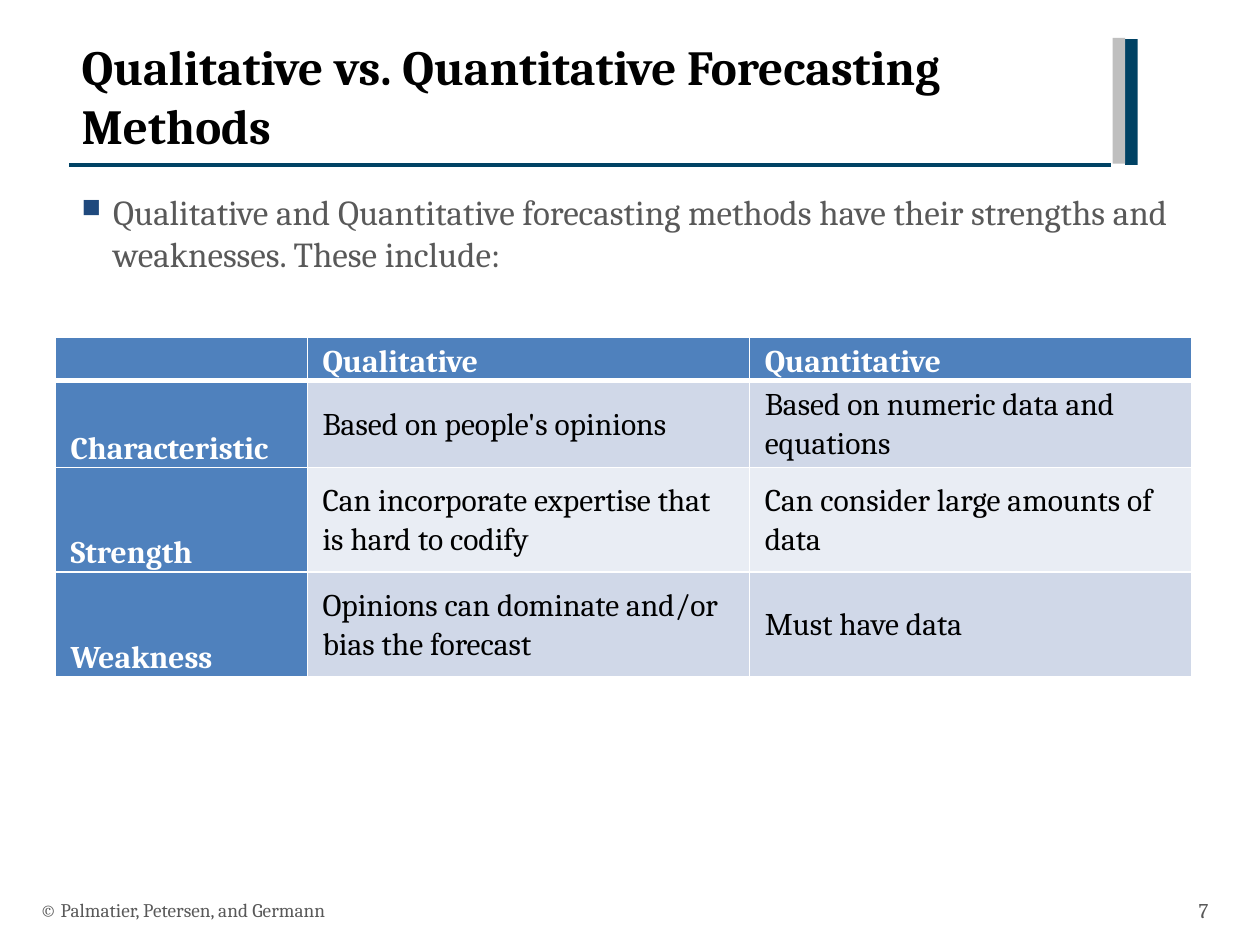
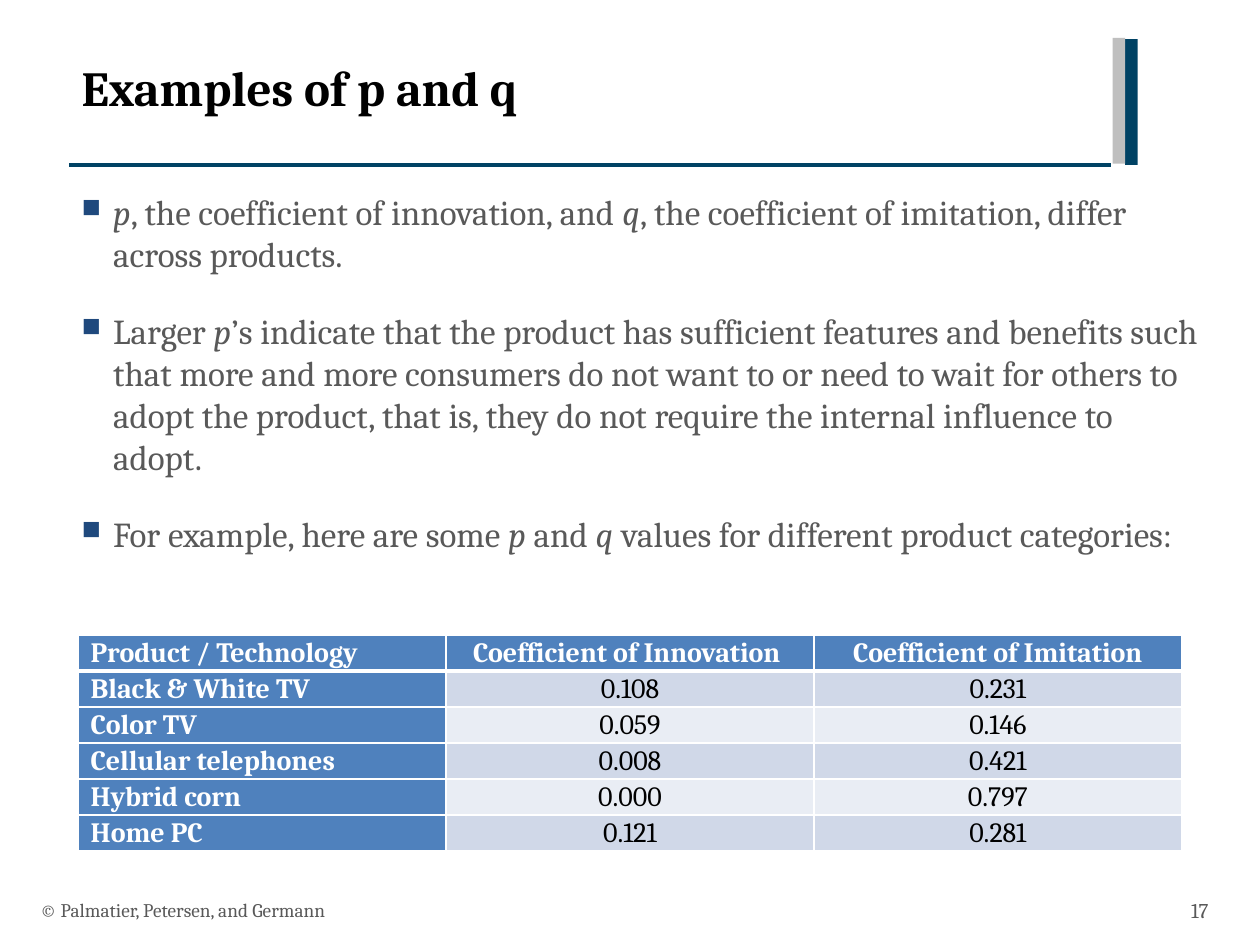
from lxml.etree import SubElement
from pptx import Presentation
from pptx.dml.color import RGBColor
from pptx.enum.shapes import MSO_CONNECTOR, MSO_SHAPE
from pptx.enum.text import MSO_ANCHOR, PP_ALIGN
from pptx.oxml.ns import qn
from pptx.util import Inches, Pt

presentation = Presentation()
presentation.slide_width = Inches(10)
presentation.slide_height = Inches(7.5)

FONT = "Cambria"
NAVY, SILVER, BULLET_BLUE = "004264", "BFBFBF", "1F497D"
HEADER_BLUE, BANDS = "4F81BD", ("D0D8E8", "E9EDF4")
WHITE = "FFFFFF"
TITLE = {"size": Pt(28), "bold": True, "color": "000000"}
BODY = {"size": Pt(20), "color": "595959"}
FOOTER = {"size": Pt(11), "color": "595959"}
NUMBER = {"size": Pt(12), "color": "595959"}
HEADING = {"bold": True, "color": WHITE}
VALUE = {"bold": False, "color": "000000"}
COPYRIGHT = "© Palmatier, Petersen, and Germann"
LINE_SPACING = 1.07


def color(hex_string):
    return RGBColor.from_string(hex_string)


def place(*shares):
    """Turn percentages of the slide's width and height, in turn, into lengths."""
    sides = (presentation.slide_width, presentation.slide_height) * 2
    return [round(side * share / 100) for side, share in zip(sides, shares)]


# Words between asterisks are italic.
slides = [
    {
        "title": "Qualitative vs. Quantitative Forecasting Methods",
        "title_top": 3.2,
        "number": "7",
        "bullets": [
            "Qualitative and Quantitative forecasting methods have their "
            "strengths and weaknesses. These include:",
        ],
        "table_place": (4.4, 35.73, 90.2, 35.87),
        "columns": (20, 35.1, 35.1),
        "rows": (4.53, 9.2, 11.07, 11.07),
        "inset": Inches(0.12),
        "size": Pt(18),
        "anchors": (MSO_ANCHOR.BOTTOM, MSO_ANCHOR.MIDDLE),
        "alignment": PP_ALIGN.LEFT,
        "cells": [
            ("", "Qualitative", "Quantitative"),
            ("Characteristic", "Based on people's opinions",
             "Based on numeric data and equations"),
            ("Strength", "Can incorporate expertise that is hard to codify",
             "Can consider large amounts of data"),
            ("Weakness", "Opinions can dominate and/or bias the forecast",
             "Must have data"),
        ],
    },
    {
        "title": "Examples of p and q",
        "title_top": 5.47,
        "number": "17",
        "bullets": [
            "*p*, the coefficient of innovation, and *q*, the coefficient of "
            "imitation, differ across products.",
            "Larger *p*’s indicate that the product has sufficient features and "
            "benefits such that more and more consumers do not want to or need "
            "to wait for others to adopt the product, that is, they do not "
            "require the internal influence to adopt.",
            "For example, here are some *p *and *q *values for different "
            "product categories:",
        ],
        "table_place": (6.2, 67.2, 87.6, 22),
        "columns": (29.2,) * 3,
        "rows": (22 / 6,) * 6,
        "inset": Inches(0.1),
        "size": Pt(16),
        "anchors": (MSO_ANCHOR.TOP, MSO_ANCHOR.TOP),
        "alignment": PP_ALIGN.CENTER,
        "cells": [
            ("Product / Technology", "Coefficient of Innovation ",
             "Coefficient of Imitation"),
            ("Black & White TV", "0.108", "0.231"),
            ("Color TV", "0.059", "0.146"),
            ("Cellular telephones", "0.008", "0.421"),
            ("Hybrid corn", "0.000", "0.797"),
            ("Home PC", "0.121", "0.281"),
        ],
    },
]

for content in slides:
    slide = presentation.slides.add_slide(presentation.slide_layouts[6])
    texts = []  # paragraph, text and format, written at the end of the slide

    # Title rule and the pair of bars at its right end
    rule = slide.shapes.add_connector(
        MSO_CONNECTOR.STRAIGHT, *place(5.5, 17.47, 88.2, 17.47))
    rule.line.color.rgb = color(NAVY)
    rule.line.width = Pt(2)
    SubElement(rule._element.spPr, qn("a:effectLst"))
    for left, top, fill in ((89.3, 4.13, NAVY), (88.3, 4, SILVER)):
        bar = slide.shapes.add_shape(
            MSO_SHAPE.RECTANGLE, *place(left, top, 1, 13.33))
        bar.shadow.inherit = False
        bar.fill.solid()
        bar.fill.fore_color.rgb = color(fill)
        bar.line.fill.background()

    # Title, bullets, copyright and slide number
    boxes = [
        ((5.5, content["title_top"], 82.6, 16.27), [content["title"]], TITLE,
         MSO_ANCHOR.TOP, PP_ALIGN.LEFT),
        ((5.5, 19.47, 91.4, 72.13), content["bullets"], BODY,
         MSO_ANCHOR.TOP, PP_ALIGN.LEFT),
        ((2.2, 93.6, 67, 5.33), [COPYRIGHT], FOOTER,
         MSO_ANCHOR.MIDDLE, PP_ALIGN.LEFT),
        ((90.8, 93.6, 6.1, 5.33), [content["number"]], NUMBER,
         MSO_ANCHOR.MIDDLE, PP_ALIGN.RIGHT),
    ]
    for shares, lines, text_format, anchor, alignment in boxes:
        frame = slide.shapes.add_textbox(*place(*shares)).text_frame
        frame.word_wrap = True
        frame.vertical_anchor = anchor
        for index, line in enumerate(lines):
            paragraph = frame.add_paragraph() if index else frame.paragraphs[0]
            paragraph.alignment = alignment
            texts.append((paragraph, line, text_format))
            if text_format is BODY:
                if index:
                    paragraph.space_before = Pt(20)
                properties = paragraph._p.get_or_add_pPr()
                properties.set("marL", str(Inches(0.25)))
                properties.set("indent", str(-Inches(0.25)))
                bullet_color = SubElement(properties, qn("a:buClr"))
                SubElement(bullet_color, qn("a:srgbClr"), val=BULLET_BLUE)
                SubElement(properties, qn("a:buSzPct"), val="75000")
                SubElement(properties, qn("a:buChar"), char="■")

    # Table with a blue header row and first column, and banded values
    table = slide.shapes.add_table(
        len(content["rows"]), len(content["columns"]),
        *place(*content["table_place"])).table
    for column, share in zip(table.columns, content["columns"]):
        column.width = place(share)[0]
    for row, share in zip(table.rows, content["rows"]):
        row.height = place(0, share)[1]
    for row_index, row_texts in enumerate(content["cells"]):
        for column_index, text in enumerate(row_texts):
            cell = table.cell(row_index, column_index)
            is_heading = row_index == 0 or column_index == 0
            cell_format = {
                "margin_left": content["inset"],
                "margin_right": content["inset"],
                "margin_top": 0,
                "margin_bottom": 0,
                "vertical_anchor": content["anchors"][0 if is_heading else 1],
            }
            for name, value in cell_format.items():
                setattr(cell, name, value)

            header_edge = {0: "lnB", 1: "lnT"}.get(row_index)
            for edge in ("lnL", "lnR", "lnT", "lnB"):
                width = Pt(3) if edge == header_edge else Pt(1)
                border = SubElement(cell._tc.get_or_add_tcPr(),
                                    qn(f"a:{edge}"), w=str(width))
                border_fill = SubElement(border, qn("a:solidFill"))
                SubElement(border_fill, qn("a:srgbClr"), val=WHITE)
            cell.fill.solid()
            cell.fill.fore_color.rgb = color(
                HEADER_BLUE if is_heading else BANDS[(row_index - 1) % 2])

            paragraph = cell.text_frame.paragraphs[0]
            paragraph.line_spacing = LINE_SPACING
            if column_index:
                paragraph.alignment = content["alignment"]
            style = HEADING if is_heading else VALUE
            texts.append((paragraph, text, {"size": content["size"], **style}))

    for paragraph, text, text_format in texts:
        for index, part in enumerate(text.split("*")):
            if not part:
                continue
            run = paragraph.add_run()
            run.text = part
            font_format = {**text_format, "name": FONT, "italic": index % 2 == 1}
            run.font.color.rgb = color(font_format.pop("color"))
            for name, value in font_format.items():
                setattr(run.font, name, value)

presentation.save("out.pptx")
